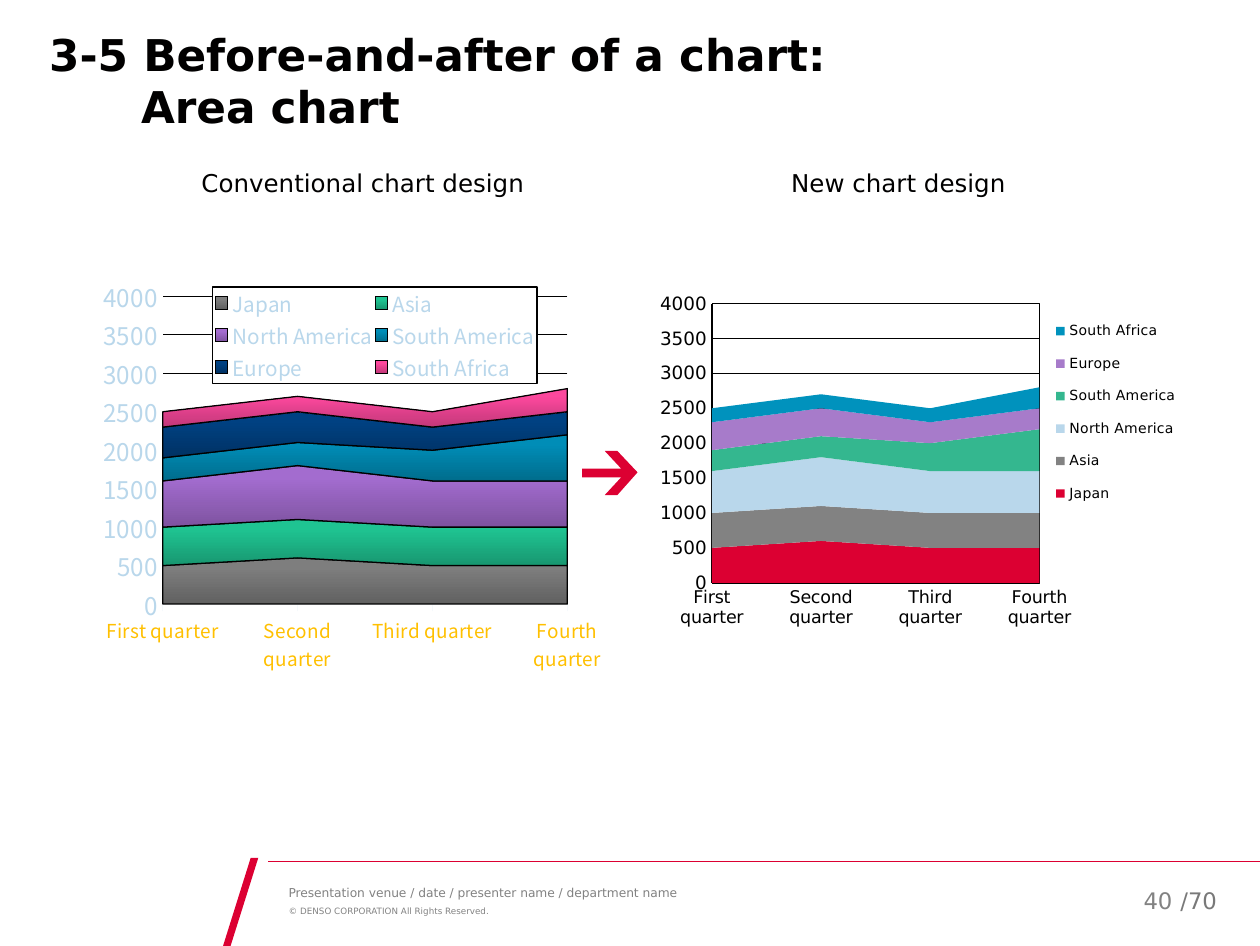
import pptx
import pptx.util
import pptx.chart.data
import pptx.dml.color
import pptx.enum.chart
import pptx.enum.shapes
import pptx.enum.text
import pptx.oxml
from pptx.oxml.ns import nsdecls, qn

Inch, Pt = pptx.util.Inches, pptx.util.Pt
Kind = pptx.enum.chart
Align = pptx.enum.text.PP_ALIGN
Mid = pptx.enum.text.MSO_ANCHOR.MIDDLE

THEME = {
    "sans": "DejaVu Sans", "asian": "Noto Sans CJK JP",
    "black": "000000", "ink": "010000", "red": "DC0032", "gray": "828282",
    "page": "797979", "pale": "B9D7EB", "gold": "FFC000", "frost": "F5F9FC",
    "title": 25, "head": 14, "num": 13, "foot": 7, "tiny": 5,
}
TITLE = ["3-5 Before-and-after of a chart:", "Area chart"]
HEADS = [("Conventional chart design", 1.49, 2.78), ("New chart design", 6.17, 1.92)]
QUARTERS = ["First quarter", "Second quarter", "Third quarter", "Fourth quarter"]
SALES = [
    ("Japan", (500, 600, 500, 500), "DC0032", ("616161", "7E7E7E")),
    ("Asia", (500, 500, 500, 500), "828282", ("189770", "1FC492")),
    ("North America", (600, 700, 600, 600), "B9D7EB", ("7E53A0", "A36CCF")),
    ("South America", (300, 300, 400, 600), "34B78F", ("006D8D", "008DB7")),
    ("Europe", (400, 400, 300, 300), "A77BCA", ("003264", "004182")),
    ("South Africa", (200, 200, 200, 300), "0092BD", ("C23879", "FC489D")),
]
NEW = {
    "box": (5.02, 2.15, 4.53, 3.21), "plot": (0.139, 0.081, 0.574, 0.691),
    "font": "sans", "cat": (10, "black"), "val": (10.5, "black"), "key": (8, "black"),
    "axis": ("black", 1.5), "side": ("black", 1.5), "grid": 0.25,
    "tick": Kind.XL_TICK_MARK.NONE, "place": Kind.XL_LEGEND_POSITION.CORNER,
    "area": (0.717, 0.09, 0.26, 0.52), "old": False,
}
OLD = {
    "box": (0.82, 2.19, 4.02, 3.14), "plot": (0.104, 0.052, 0.811, 0.781),
    "font": "asian", "cat": (11, "gold"), "val": (14, "pale"), "key": (12, "pale"),
    "axis": ("frost", 0.75), "side": None, "grid": 0.75,
    "tick": Kind.XL_TICK_MARK.OUTSIDE, "place": Kind.XL_LEGEND_POSITION.TOP,
    "area": (0.204, 0.028, 0.65, 0.245), "old": True,
}
SLASH = [(2.05, 6.81), (1.99, 6.81), (1.77, 7.51), (1.83, 7.51)]
ARROW = [(4.9, 3.58), (4.8, 3.58), (4.93, 3.72), (4.62, 3.72), (4.62, 3.79),
         (4.93, 3.79), (4.8, 3.93), (4.9, 3.93), (5.06, 3.75)]


def tint(name):
    return pptx.dml.color.RGBColor.from_string(THEME.get(name, name))


def style(font, size, color, face="sans", bold=False):
    font.size, font.name, font.bold = Pt(size), THEME[face], bold
    font.color.rgb = tint(color)


def draw(line, color, width):
    line.color.rgb = tint(color)
    line.width = Pt(width)


def write(box, text, size, color, side=Align.LEFT, pad=(0, 0, 0, 0), wrap=True):
    shape = slide.shapes.add_textbox(*map(Inch, box))
    frame = shape.text_frame
    frame.word_wrap = wrap
    (frame.margin_left, frame.margin_top,
     frame.margin_right, frame.margin_bottom) = map(Inch, pad)
    para = frame.paragraphs[0]
    para.alignment = side
    run = para.add_run()
    run.text = text
    style(run.font, THEME[size], color)
    return frame


def trace(points):
    form = slide.shapes.build_freeform(
        Inch(points[0][0]), Inch(points[0][1]), scale=1.0)
    form.add_line_segments([(Inch(x), Inch(y)) for x, y in points[1:]], close=True)
    shape = form.convert_to_shape()
    shape.shadow.inherit = False
    shape.fill.solid()
    shape.fill.fore_color.rgb = tint("red")
    shape.line.fill.background()


def layout(share, inner=False):
    target = '<c:layoutTarget val="inner"/>' if inner else ""
    modes = "".join(f'<c:{k}Mode val="edge"/>' for k in "xy")
    parts = "".join(f'<c:{k} val="{v}"/>' for k, v in zip("xywh", share))
    return pptx.oxml.parse_xml(
        f'<c:layout {nsdecls("c")}><c:manualLayout>{target}{modes}{parts}'
        '</c:manualLayout></c:layout>')


def frame_of(fill, width):
    return pptx.oxml.parse_xml(
        f'<c:spPr {nsdecls("c", "a")}>{fill}<a:ln w="{Pt(width)}"><a:solidFill>'
        f'<a:srgbClr val="{THEME["black"]}"/></a:solidFill></a:ln></c:spPr>')


def chart_of(look):
    data = pptx.chart.data.CategoryChartData()
    data.categories = QUARTERS
    for name, values, _, _ in SALES:
        data.add_series(name, values)
    chart = slide.shapes.add_chart(
        Kind.XL_CHART_TYPE.AREA_STACKED, *map(Inch, look["box"]), data).chart
    chart.has_title = False
    style(chart.font, 10, "black")
    plot = chart.plots[0]
    plot.vary_by_categories = False
    for series, (_, _, flat, fade) in zip(plot.series, SALES):
        fill = series.format.fill
        if look["old"]:
            fill.gradient()
            fill.gradient_angle = 90
            for stop, color, spot in zip(fill.gradient_stops, fade, (0, 0.8)):
                stop.color.rgb, stop.position = tint(color), spot
            draw(series.format.line, "black", 0.75)
        else:
            fill.solid()
            fill.fore_color.rgb = tint(flat)
            series.format.line.fill.background()

    cat, val = chart.category_axis, chart.value_axis
    for axis, part, line in ((cat, "cat", "axis"), (val, "val", "side")):
        style(axis.tick_labels.font, *look[part], look["font"])
        axis.minor_tick_mark = Kind.XL_TICK_MARK.NONE
        if look[line]:
            draw(axis.format.line, *look[line])
        else:
            axis.format.line.fill.background()
    cat.major_tick_mark = look["tick"]
    val.major_tick_mark = Kind.XL_TICK_MARK.NONE
    val.minimum_scale, val.maximum_scale, val.major_unit = 0, 4000, 500
    val.has_major_gridlines = True
    draw(val.major_gridlines.format.line, "black", look["grid"])
    for cross in chart.element.iter(qn("c:crossBetween")):
        cross.set("val", "midCat")

    chart.has_legend = True
    key = chart.legend
    key.position = look["place"]
    key.include_in_layout = look["old"]
    style(key.font, *look["key"], look["font"])

    area = next(chart.element.iter(qn("c:plotArea")))
    node = next(chart.element.iter(qn("c:legend")))
    for part in (area, node):
        for spare in part.findall(qn("c:layout")):
            part.remove(spare)
    area.insert(0, layout(look["plot"], True))
    node.find(qn("c:legendPos")).addnext(layout(look["area"]))
    if look["old"]:
        white = '<a:solidFill><a:srgbClr val="FFFFFF"/></a:solidFill>'
        node.find(qn("c:overlay")).addnext(frame_of(white, 0.75))
    else:
        area.append(frame_of("<a:noFill/>", 0.25))


deck = pptx.Presentation()
deck.slide_width, deck.slide_height = Inch(10), Inch(7.51)
slide = deck.slides.add_slide(deck.slide_layouts[5])

rule = slide.shapes.add_connector(
    pptx.enum.shapes.MSO_CONNECTOR.STRAIGHT, *map(Inch, (2.13, 6.84, 10, 6.84)))
draw(rule.line, "red", 0.5)
rule._element.spPr.append(pptx.oxml.parse_xml(f'<a:effectLst {nsdecls("a")}/>'))
trace(SLASH)

edge = (0.1, 0.05, 0.1, 0.05)
write((9.27, 6.99, 0.52, 0.32), "/70", "num", "page",
      pad=edge, wrap=False).vertical_anchor = Mid
write((2.29, 7.03, 6.3, 0.12),
      "Presentation venue / date / presenter name / department name", "foot", "gray")
write((2.29, 7.19, 6.3, 0.08),
      "© DENSO CORPORATION All Rights Reserved.", "tiny", "gray")
write((8.34, 6.95, 1.12, 0.4), "40 ", "num", "gray",
      Align.RIGHT, edge).vertical_anchor = Mid

title = slide.shapes.title
title.left, title.top, title.width, title.height = map(Inch, (0, 0.22, 10, 0.39))
frame = title.text_frame
frame.auto_size = pptx.enum.text.MSO_AUTO_SIZE.NONE
frame.vertical_anchor = pptx.enum.text.MSO_ANCHOR.TOP
frame.margin_left, frame.margin_right = Inch(0.39), Inch(1.57)
frame.margin_top = frame.margin_bottom = 0
para = frame.paragraphs[0]
para.alignment = Align.LEFT
props = para._p.get_or_add_pPr()
props.set("marL", str(Inch(0.73)))
props.set("indent", str(-Inch(0.73)))
for row, text in enumerate(TITLE):
    if row:
        para.add_line_break()
    run = para.add_run()
    run.text = text
    style(run.font, THEME["title"], "ink", bold=True)

trace(ARROW)
for text, left, width in HEADS:
    head = write((left, 1.26, width, 0.36), text, "head", "ink",
                 Align.CENTER, edge, False)
    head.paragraphs[0].line_spacing = 1.1
for look in (NEW, OLD):
    chart_of(look)

deck.save("out.pptx")
